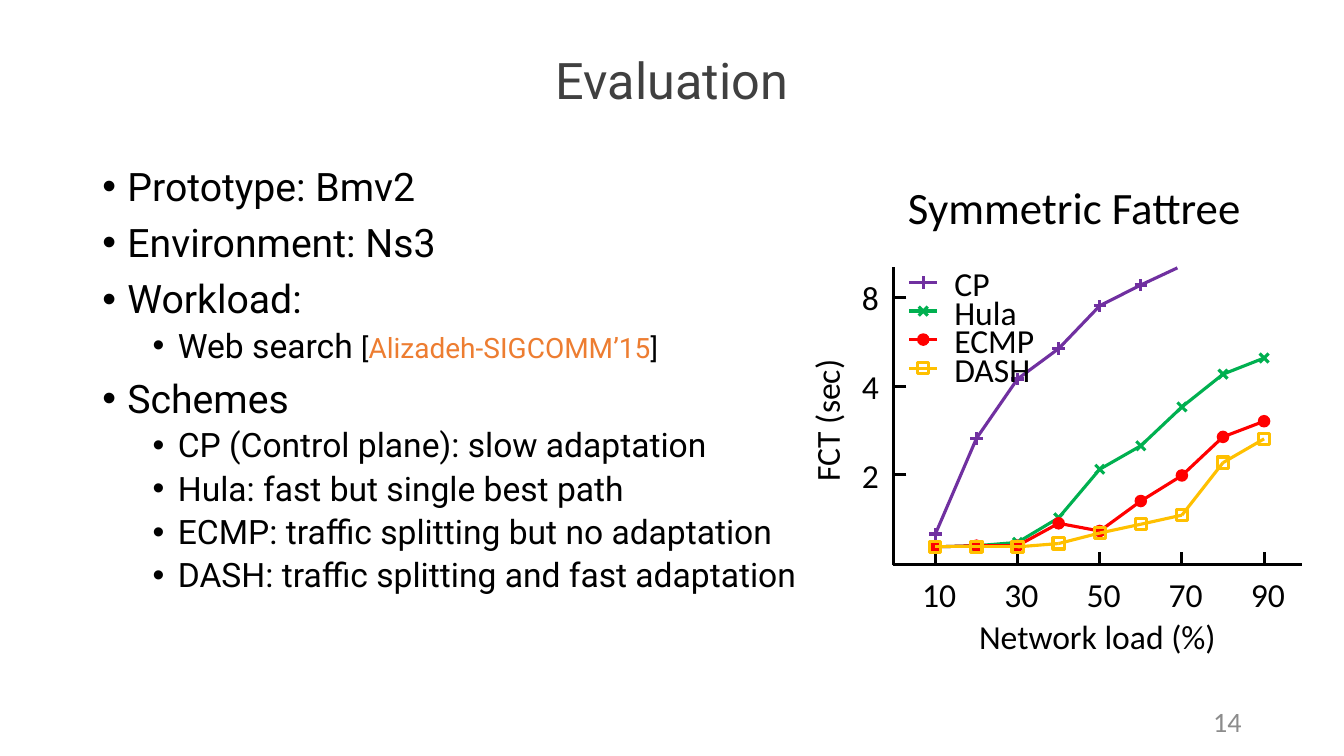
from math import log2

from lxml import etree
from pptx import Presentation
from pptx.enum import shapes, text
from pptx.dml.color import RGBColor
from pptx.oxml import ns
from pptx.util import Pt

COLORS = {
    "title": "404040", "ink": "000000", "number": "8C8C8C", "cite": "ED7D31",
    "CP": "7030A0", "Hula": "00B050", "ECMP": "FF0000", "DASH": "FFC000",
}
LEFT, CENTER, RIGHT = text.PP_ALIGN.LEFT, text.PP_ALIGN.CENTER, text.PP_ALIGN.RIGHT
TOP, MIDDLE = text.MSO_ANCHOR.TOP, text.MSO_ANCHOR.MIDDLE

# Each bullet: level and a list of (text, size, colour) runs
BULLETS = [
    (0, [("Prototype: Bmv2", 28, "ink")]),
    (0, [("Environment: Ns3", 28, "ink")]),
    (0, [("Workload:", 28, "ink")]),
    (1, [("Web search ", 24, "ink"), ("[", 20, "ink"),
         ("Alizadeh-SIGCOMM’15", 20, "cite"), ("]", 20, "ink")]),
    (0, [("Schemes", 28, "ink")]),
    (1, [("CP (Control plane): slow adaptation", 24, "ink")]),
    (1, [("Hula: fast but single best path", 24, "ink")]),
    (1, [("ECMP: traffic splitting but no adaptation", 24, "ink")]),
    (1, [("DASH: traffic splitting and fast adaptation", 24, "ink")]),
]

# Flow completion time in seconds at loads of 10 %, 20 %, ...
FCT = {
    "CP": [1.26, 2.66, 4.23, 5.36, 7.49, 8.81],
    "Hula": [1.14, 1.15, 1.18, 1.43, 2.09, 2.51, 3.4, 4.39, 4.98],
    "ECMP": [1.14, 1.15, 1.15, 1.37, 1.29, 1.63, 1.99, 2.69, 3.04],
    "DASH": [1.14, 1.14, 1.14, 1.17, 1.27, 1.36, 1.46, 2.2, 2.65],
}
CP_EXIT = (68.9, 10.07)  # where the CP curve leaves the plot
AXIS_X, AXIS_Y, AXIS_TOP, AXIS_RIGHT = 638.4, 403.4, 190.8, 930.2
TICK = 9


def x_at(load):
    return 638.8 + 2.935 * load


def y_at(seconds):
    """Logarithmic scale: one doubling is 63.4 points."""
    return 402.6 - 63.4 * log2(seconds)


class SlideBuilder:
    def __init__(self, slide, heading_font="Roboto", label_font="Calibri"):
        self.shapes = slide.shapes
        self.heading_font = heading_font
        self.label_font = label_font

    def rgb(self, color):
        return RGBColor.from_string(COLORS[color])

    def style(self, font, size, color, name):
        font.size, font.name = Pt(size), name
        font.color.rgb = self.rgb(color)

    def frame(self, left, top, width, height, anchor=TOP, wrap=True):
        box = self.shapes.add_textbox(Pt(left), Pt(top), Pt(width), Pt(height))
        frame = box.text_frame
        frame.word_wrap, frame.vertical_anchor = wrap, anchor
        if not wrap:
            frame.auto_size = text.MSO_AUTO_SIZE.SHAPE_TO_FIT_TEXT
        return frame

    def label(self, words, left, top, width, height=36, size=24, color="ink",
              align=LEFT, font=None, anchor=TOP, wrap=False, upward=False):
        frame = self.frame(left, top, width, height, anchor, wrap)
        if upward:
            frame._txBody.bodyPr.set("vert", "vert270")
        line = frame.paragraphs[0]
        line.text, line.alignment = words, align
        self.style(line.font, size, color, font or self.label_font)
        return line

    def bullets(self, items, left, top, width, height):
        frame = self.frame(left, top, width, height)
        for index, (level, runs) in enumerate(items):
            line = frame.add_paragraph() if index else frame.paragraphs[0]
            line.level, line.line_spacing = level, 0.9
            if index:
                line.space_before = Pt(5 if level else 10)
            props = line._p.get_or_add_pPr()
            props.set("marL", str(Pt(54 if level else 18)))
            props.set("indent", str(-Pt(18)))
            etree.SubElement(props, ns.qn("a:buFont")).set("typeface", "Arial")
            etree.SubElement(props, ns.qn("a:buChar")).set("char", "•")
            line.font.name = self.heading_font
            for words, size, color in runs:
                run = line.add_run()
                run.text = words
                self.style(run.font, size, color, self.heading_font)

    def line(self, x1, y1, x2, y2, color="ink"):
        connector = self.shapes.add_connector(
            shapes.MSO_CONNECTOR.STRAIGHT, Pt(x1), Pt(y1), Pt(x2), Pt(y2))
        connector.line.color.rgb = self.rgb(color)
        connector.line.width = Pt(2.25)
        etree.SubElement(connector._element.spPr, ns.qn("a:effectLst"))

    def dot(self, x, y, color, kind, filled):
        dot = self.shapes.add_shape(kind, Pt(x - 4), Pt(y - 4), Pt(8), Pt(8))
        dot.shadow.inherit = False
        if filled:
            dot.fill.solid()
            dot.fill.fore_color.rgb = self.rgb(color)
        else:
            dot.fill.background()
        dot.line.color.rgb = self.rgb(color)
        dot.line.width = Pt(1 if filled else 2.25)

    def marker(self, scheme, x, y):
        if scheme == "CP":
            self.line(x - 4.4, y, x + 4.4, y, scheme)
            self.line(x, y + 4.4, x, y - 4.4, scheme)
        elif scheme == "Hula":
            self.line(x + 3.2, y - 3.2, x - 3.2, y + 3.2, scheme)
            self.line(x - 3.2, y - 3.2, x + 3.2, y + 3.2, scheme)
        elif scheme == "ECMP":
            self.dot(x, y, scheme, shapes.MSO_SHAPE.OVAL, True)
        else:
            self.dot(x, y, scheme, shapes.MSO_SHAPE.RECTANGLE, False)

    def axes(self):
        self.line(AXIS_X - 0.5, AXIS_Y, AXIS_RIGHT, AXIS_Y)
        self.line(AXIS_X, AXIS_Y + 0.5, AXIS_X, AXIS_TOP)
        for load in range(10, 91, 20):
            x = x_at(load)
            self.line(x, AXIS_Y, x, AXIS_Y - TICK)
            self.label(str(load), x - 16.9, 406.1, 38.9, align=RIGHT)
        for seconds in (2, 4, 8):
            y = y_at(seconds)
            self.line(AXIS_X + TICK, y, AXIS_X, y)
            self.label(str(seconds), 608.4, y - 18, 26.6, align=RIGHT)
        self.label("FCT (sec)", 572.4, 249.8, 43.9, 95, align=RIGHT, upward=True)
        self.label("Network load (%)", 690.5, 436.3, 185, align=RIGHT)

    def curve(self, scheme, times):
        points = [(x_at(10 * step), y_at(time)) for step, time in enumerate(times, 1)]
        for point in points:
            self.marker(scheme, *point)
        if scheme == "CP":
            points.append((x_at(CP_EXIT[0]), y_at(CP_EXIT[1])))
        for start, end in zip(points, points[1:]):
            self.line(*start, *end, scheme)

    def legend(self, widths):
        for row, (scheme, width) in enumerate(widths.items()):
            y = 201.8 + 20.4 * row
            self.marker(scheme, 659.5, y)
            self.line(649.5, y, 669.5, y, scheme)
            self.label(scheme, 674.6, y - 17.5, width)


def main():
    deck = Presentation()
    deck.slide_width, deck.slide_height = Pt(960), Pt(540)
    page = SlideBuilder(deck.slides.add_slide(deck.slide_layouts[6]))

    title = page.label("Evaluation", 66, 28.8, 828, 61.2, 36, "title", CENTER,
                       page.heading_font, MIDDLE, True)
    title.line_spacing = 0.9
    page.bullets(BULLETS, 66, 115.9, 828, 370)
    page.label("14", 678, 500.5, 216, 28.8, 20, "number", RIGHT,
               anchor=MIDDLE, wrap=True)

    page.label("Symmetric Fattree", 641.5, 124.6, 254.9, 46, 32)
    page.axes()
    for scheme, times in FCT.items():
        page.curve(scheme, times)
    page.legend({"CP": 39.6, "Hula": 59.8, "ECMP": 72, "DASH": 69.1})

    deck.save("out.pptx")


if __name__ == "__main__":
    main()
